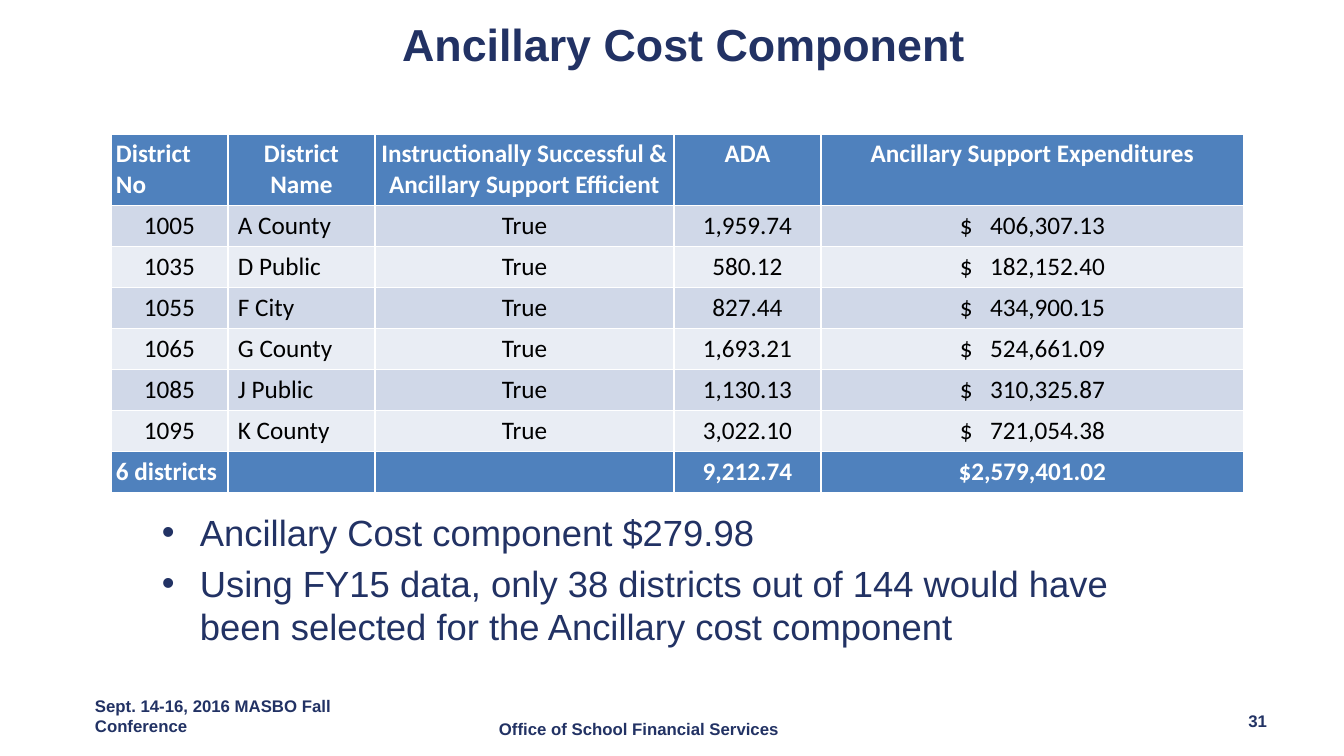
from dataclasses import dataclass

from lxml.etree import SubElement
from pptx import Presentation
from pptx.dml.color import RGBColor
from pptx.enum.text import MSO_ANCHOR, PP_ALIGN
from pptx.oxml.ns import qn
from pptx.util import Pt

EMU_PER_PX = 914400 / 100.8


@dataclass(frozen=True)
class Theme:
    navy: str = "223264"
    header: str = "4F81BD"
    bands: tuple = ("D0D8E8", "E9EDF4")
    white: str = "FFFFFF"
    black: str = "000000"
    text_font: str = "Arial"
    table_font: str = "Calibri"
    title_size: int = 32
    bullet_size: int = 26
    table_size: int = 18
    footer_size: int = 12


THEME = Theme()

HEADINGS = ["District No", "District Name",
            "Instructionally Successful & Ancillary Support Efficient",
            "ADA", "Ancillary Support Expenditures"]
DISTRICTS = [
    ("1005", "A County", "True", "1,959.74", "$\t406,307.13"),
    ("1035", "D Public", "True", "580.12", "$\t182,152.40"),
    ("1055", "F City", "True", "827.44", "$\t434,900.15"),
    ("1065", "G County", "True", "1,693.21", "$\t524,661.09"),
    ("1085", "J Public", "True", "1,130.13", "$\t310,325.87"),
    ("1095", "K County", "True", "3,022.10", "$\t721,054.38"),
]
TOTALS = ["6 districts", "", "", "9,212.74", "$2,579,401.02"]
COLUMN_WIDTHS = [117, 147, 299, 147, 423]
HEADER_HEIGHT, ROW_HEIGHT = 71, 41
CELL_INSET, NAME_INSET = 5, 10
AMOUNT_INSET, AMOUNT_WIDTH = 139, 145

BULLETS = [
    "Ancillary Cost component $279.98",
    "Using FY15 data, only 38 districts out of 144 would have been selected "
    "for the Ancillary cost component",
]
BULLET_INDENT = 38


def px(length):
    return round(length * EMU_PER_PX)


def format_runs(paragraph, font_name, size, color, bold=False):
    for run in paragraph.runs:
        run.font.name = font_name
        run.font.size = Pt(size)
        run.font.bold = bold
        run.font.color.rgb = RGBColor.from_string(color)


def add_title(slide, box, text):
    title = slide.shapes.title
    title.left, title.top, title.width, title.height = map(px, box)
    frame = title.text_frame
    frame.text = text
    frame.vertical_anchor = MSO_ANCHOR.TOP
    paragraph = frame.paragraphs[0]
    paragraph.alignment = PP_ALIGN.LEFT
    format_runs(paragraph, THEME.text_font, THEME.title_size, THEME.navy, True)


def add_text_frame(slide, box, text):
    frame = slide.shapes.add_textbox(*map(px, box)).text_frame
    frame.word_wrap = True
    frame.text = text
    return frame


def add_bullets(slide, box, items):
    frame = add_text_frame(slide, box, "\n".join(items))
    for index, paragraph in enumerate(frame.paragraphs):
        properties = paragraph._p.get_or_add_pPr()
        properties.set("marL", str(px(BULLET_INDENT)))
        properties.set("indent", str(-px(BULLET_INDENT)))
        if index:
            paragraph.space_before = Pt(THEME.bullet_size * 0.2)
        SubElement(properties, qn("a:buFont")).set("typeface", THEME.text_font)
        SubElement(properties, qn("a:buChar")).set("char", "•")
        format_runs(paragraph, THEME.text_font, THEME.bullet_size, THEME.navy)


def add_footer(slide, box, text, alignment=PP_ALIGN.LEFT):
    frame = add_text_frame(slide, box, text)
    frame.vertical_anchor = MSO_ANCHOR.MIDDLE
    paragraph = frame.paragraphs[0]
    paragraph.alignment = alignment
    format_runs(paragraph, THEME.text_font, THEME.footer_size, THEME.navy, True)


def fill_cell(cell, text, fill, color, bold, alignment, inset=CELL_INSET):
    cell.fill.solid()
    cell.fill.fore_color.rgb = RGBColor.from_string(fill)
    cell.margin_left = px(inset)
    cell.margin_right = cell.margin_top = cell.margin_bottom = px(CELL_INSET)
    cell.text = text
    paragraph = cell.text_frame.paragraphs[0]
    paragraph.alignment = alignment
    if "\t" in text:
        tabs = SubElement(paragraph._p.get_or_add_pPr(), qn("a:tabLst"))
        stop = SubElement(tabs, qn("a:tab"))
        stop.set("pos", str(px(AMOUNT_WIDTH)))
        stop.set("algn", "r")
    paragraph.font.size = Pt(THEME.table_size)
    format_runs(paragraph, THEME.table_font, THEME.table_size, color, bold)


def add_district_table(slide, left, top):
    rows = [HEADINGS, *DISTRICTS, TOTALS]
    heights = [HEADER_HEIGHT] + [ROW_HEIGHT] * (len(rows) - 1)
    table = slide.shapes.add_table(
        len(rows), len(HEADINGS), px(left), px(top),
        px(sum(COLUMN_WIDTHS)), px(sum(heights))).table
    table.last_row = True
    for column, width in zip(table.columns, COLUMN_WIDTHS):
        column.width = px(width)
    for row, height in zip(table.rows, heights):
        row.height = px(height)

    for row_index, row in enumerate(rows):
        emphasized = row_index in (0, len(rows) - 1)
        for column_index, text in enumerate(row):
            cell = table.cell(row_index, column_index)
            if emphasized:
                alignment = PP_ALIGN.CENTER if column_index else PP_ALIGN.LEFT
                fill_cell(cell, text, THEME.header, THEME.white, True, alignment)
            else:
                insets = {1: NAME_INSET, 4: AMOUNT_INSET}
                alignment = PP_ALIGN.LEFT if column_index in insets else PP_ALIGN.CENTER
                fill_cell(cell, text, THEME.bands[(row_index - 1) % 2], THEME.black,
                          False, alignment, insets.get(column_index, CELL_INSET))


def main():
    presentation = Presentation()
    presentation.slide_width, presentation.slide_height = px(1344), px(756)
    slide = presentation.slides.add_slide(presentation.slide_layouts[5])
    add_title(slide, (392, 12, 716, 112), "Ancillary Cost Component")
    add_district_table(slide, 111, 134)
    add_bullets(slide, (152, 505, 1051, 158), BULLETS)
    add_footer(slide, (489, 701, 313, 55), "Office of School Financial Services")
    add_footer(slide, (85, 688, 313, 55), "Sept. 14-16, 2016 MASBO Fall Conference")
    add_footer(slide, (964, 693, 313, 55), "31", PP_ALIGN.RIGHT)
    presentation.save("out.pptx")


if __name__ == "__main__":
    main()
